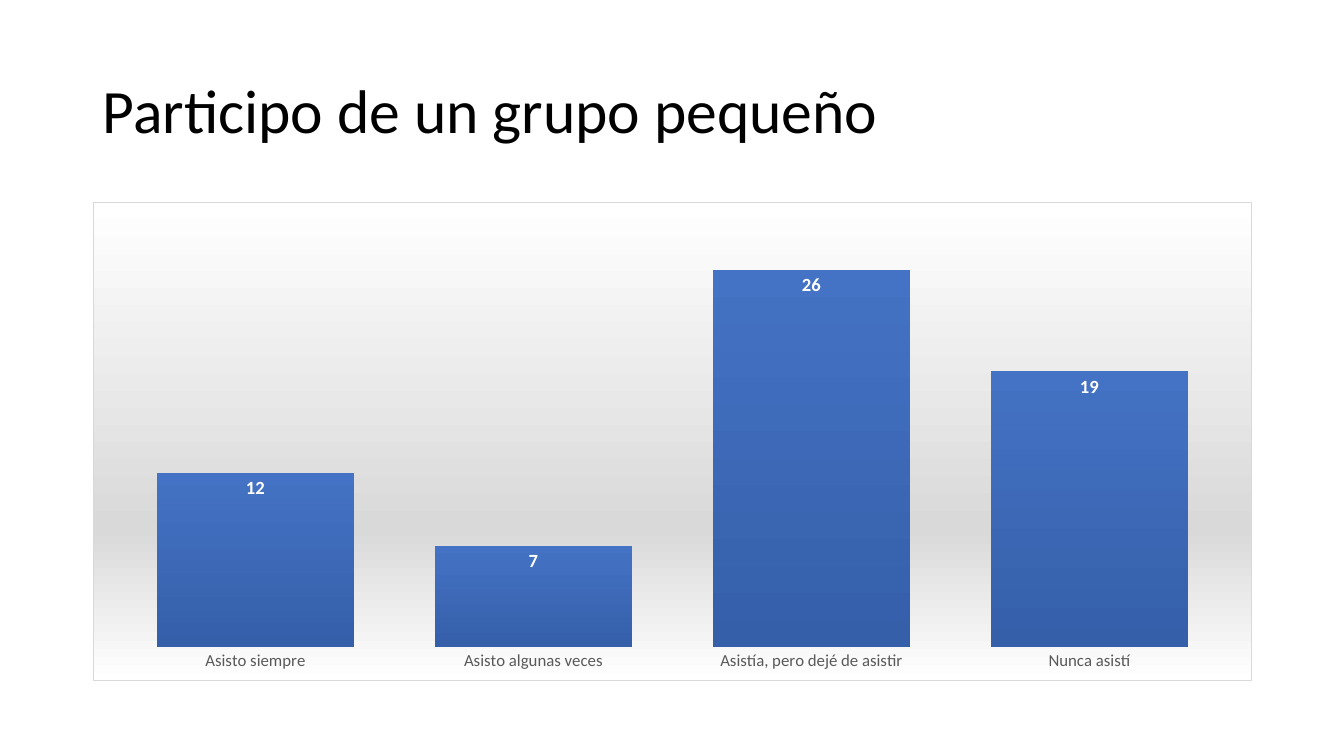
from lxml.etree import SubElement
from pptx import Presentation
from pptx.chart.data import CategoryChartData
from pptx.dml.color import RGBColor
from pptx.enum.chart import XL_CHART_TYPE, XL_LABEL_POSITION, XL_TICK_MARK
from pptx.enum.text import MSO_ANCHOR
from pptx.oxml import parse_xml
from pptx.oxml.ns import nsdecls, qn
from pptx.util import Inches, Pt

FONT = "Calibri"
COLORS = {
    "title": "000000",
    "axis": "595959",
    "label": "FFFFFF",
    "edge": "D9D9D9",
    "glow": "FFFFFF",
    "shade": "D9D9D9",
    "bar": "4472C4",
    "base": "355FA9",
}
ANSWERS = {
    "Asisto siempre": 12,
    "Asisto algunas veces": 7,
    "Asistía, pero dejé de asistir": 26,
    "Nunca asistí": 19,
}
WIDE, HIGH = Inches(13.33), Inches(7.5)
LEFT, SPAN = Inches(0.92), Inches(11.5)


def style(font, size, color, bold=False):
    font.name, font.size, font.bold = FONT, Pt(size), bold
    font.color.rgb = RGBColor.from_string(COLORS[color])


def gradient(stops):
    """Return a top-to-bottom gradient fill from (percent, colour name) pairs."""
    marks = "".join(
        f'<a:gs pos="{share * 1000}"><a:srgbClr val="{COLORS[name]}"/></a:gs>'
        for share, name in stops
    )
    return parse_xml(
        f'<a:gradFill {nsdecls("a")} rotWithShape="1"><a:gsLst>{marks}</a:gsLst>'
        '<a:lin ang="5400000" scaled="0"/></a:gradFill>'
    )


def add_title(slide, box, text):
    frame = slide.shapes.add_textbox(*box).text_frame
    frame.word_wrap = True
    frame.vertical_anchor = MSO_ANCHOR.MIDDLE
    line = frame.paragraphs[0]
    line.line_spacing = 0.9
    run = line.add_run()
    run.text = text
    style(run.font, 44, "title")


def fill_area(chart):
    """Give the chart area its gradient and thin border."""
    props = parse_xml(
        f'<c:spPr {nsdecls("c", "a")}><a:ln w="{Pt(0.75)}"><a:solidFill>'
        f'<a:srgbClr val="{COLORS["edge"]}"/></a:solidFill></a:ln></c:spPr>'
    )
    props.insert(0, gradient([(0, "glow"), (68, "shade"), (100, "glow")]))
    chart.element.find(qn("c:chart")).addnext(props)


def fix_plot(chart):
    """Pin the inner plot area as shares of the chart."""
    area = chart.element.find(".//" + qn("c:plotArea"))
    for old in area.findall(qn("c:layout")):
        area.remove(old)
    layout = parse_xml(f'<c:layout {nsdecls("c")}><c:manualLayout/></c:layout>')
    rules = {"layoutTarget": "inner", "xMode": "edge", "yMode": "edge",
             "x": "0.02", "y": "0.02", "w": "0.96", "h": "0.91"}
    for name, val in rules.items():
        SubElement(layout[0], qn("c:" + name)).set("val", val)
    area.insert(0, layout)


def add_bars(slide, box, answers):
    data = CategoryChartData()
    data.categories = list(answers)
    data.add_series("Series 1", list(answers.values()))
    chart = slide.shapes.add_chart(XL_CHART_TYPE.COLUMN_CLUSTERED, *box, data).chart
    chart.has_legend = chart.has_title = False
    style(chart.font, 10, "title")
    fill_area(chart)
    fix_plot(chart)

    scale = chart.value_axis
    scale.minimum_scale, scale.maximum_scale = 0, 30
    scale.has_major_gridlines = scale.visible = False
    axis = chart.category_axis
    axis.major_tick_mark = XL_TICK_MARK.NONE
    axis.format.line.fill.background()
    style(axis.tick_labels.font, 12, "axis")

    plot = chart.plots[0]
    plot.gap_width, plot.vary_by_categories = 41, False
    bars = plot.series[0]
    bars.format.line.fill.background()
    bars.format.fill.background()
    props = bars.format.fill._xPr
    props.replace(props.find(qn("a:noFill")), gradient([(0, "bar"), (100, "base")]))
    labels = bars.data_labels
    labels.show_value = True
    labels.position = XL_LABEL_POSITION.INSIDE_END
    style(labels.font, 13.3, "label", True)


def main():
    deck = Presentation()
    deck.slide_width, deck.slide_height = WIDE, HIGH
    slide = deck.slides.add_slide(deck.slide_layouts[6])
    add_title(slide, (LEFT, Inches(0.4), SPAN, Inches(1.45)),
              "Participo de un grupo pequeño")
    add_bars(slide, (LEFT, Inches(2), SPAN, Inches(4.76)), ANSWERS)
    deck.save("out.pptx")


if __name__ == "__main__":
    main()
